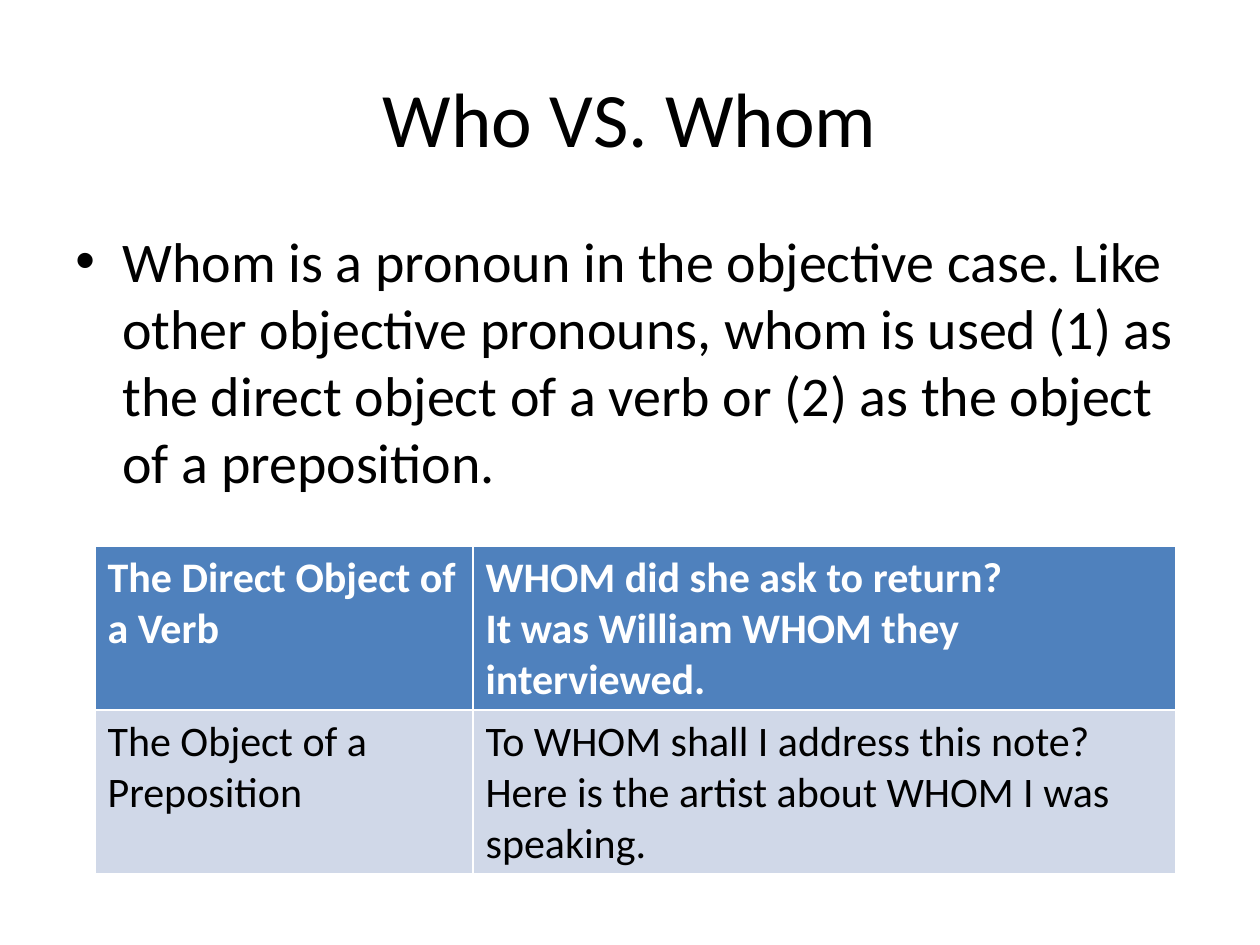
from lxml import etree
from pptx import Presentation, util as u
from pptx.dml.color import RGBColor
from pptx.enum import text
from pptx.oxml.ns import qn

EMU_PER_PX = 914400 / 126
COLORS = {"ink": "000000", "header": "4F81BD", "header_text": "FFFFFF", "band": "D0D8E8"}


def px(n):
    return u.Emu(round(n * EMU_PER_PX))


class Deck:
    font = "Calibri"

    def __init__(self, width, height):
        self.prs = Presentation()
        self.prs.slide_width, self.prs.slide_height = px(width), px(height)
        self.s = self.prs.slides.add_slide(self.prs.slide_layouts[6])

    def color(self, name):
        return RGBColor.from_string(COLORS[name])

    def set_lines(self, tf, lines, size, color="ink", bold=False):
        tf.text = "\n".join(lines)
        for p in tf.paragraphs:
            p.font.name, p.font.size, p.font.bold = self.font, u.Pt(size), bold
            p.font.color.rgb = self.color(color)

    def textbox(self, box, line, size):
        tf = self.s.shapes.add_textbox(*map(px, box)).text_frame
        tf.word_wrap = True
        self.set_lines(tf, [line], size)
        return tf

    def title(self, box, line):
        tf = self.textbox(box, line, 44)
        tf.vertical_anchor = text.MSO_ANCHOR.MIDDLE
        tf.paragraphs[0].alignment = text.PP_ALIGN.CENTER

    def bullet(self, box, line, indent=47):
        """Add a one-paragraph text box with a hanging bullet."""
        p = self.textbox(box, line, 32).paragraphs[0]
        pPr = p._p.get_or_add_pPr()
        pPr.set("marL", str(px(indent)))
        pPr.set("indent", str(-px(indent)))
        bullet_font = etree.Element(qn("a:buFont"), typeface="Arial")
        bullet_char = etree.Element(qn("a:buChar"), char="•")
        pPr.insert(0, bullet_font)
        bullet_font.addnext(bullet_char)

    def table(self, left, top, widths, row_height, rows):
        """Add a table whose first row is the header; each cell is a list of lines."""
        frame = self.s.shapes.add_table(
            len(rows), len(widths), px(left), px(top),
            px(sum(widths)), px(row_height * len(rows)))
        table = frame.table
        for column, width in zip(table.columns, widths):
            column.width = px(width)
        for i, row in enumerate(rows):
            fill, ink = ("band", "ink") if i else ("header", "header_text")
            for j, lines in enumerate(row):
                cell = table.cell(i, j)
                cell.fill.solid()
                cell.fill.fore_color.rgb = self.color(fill)
                self.set_lines(cell.text_frame, lines, 24, ink, bold=i == 0)


def main():
    deck = Deck(1260, 945)
    deck.title((63, 38, 1134, 157), "Who VS. Whom")
    deck.bullet(
        (63, 220, 1134, 624),
        "Whom is a pronoun in the objective case. Like other objective pronouns, "
        "whom is used (1) as the direct object of a verb or (2) as the object of "
        "a preposition.")
    deck.table(95, 546, (378, 703), 164, [
        [["The Direct Object of a Verb"],
         ["WHOM did she ask to return?", "It was William WHOM they interviewed."]],
        [["The Object of a Preposition"],
         ["To WHOM shall I address this note?",
          "Here is the artist about WHOM I was speaking."]],
    ])
    deck.prs.save("out.pptx")


if __name__ == "__main__":
    main()
